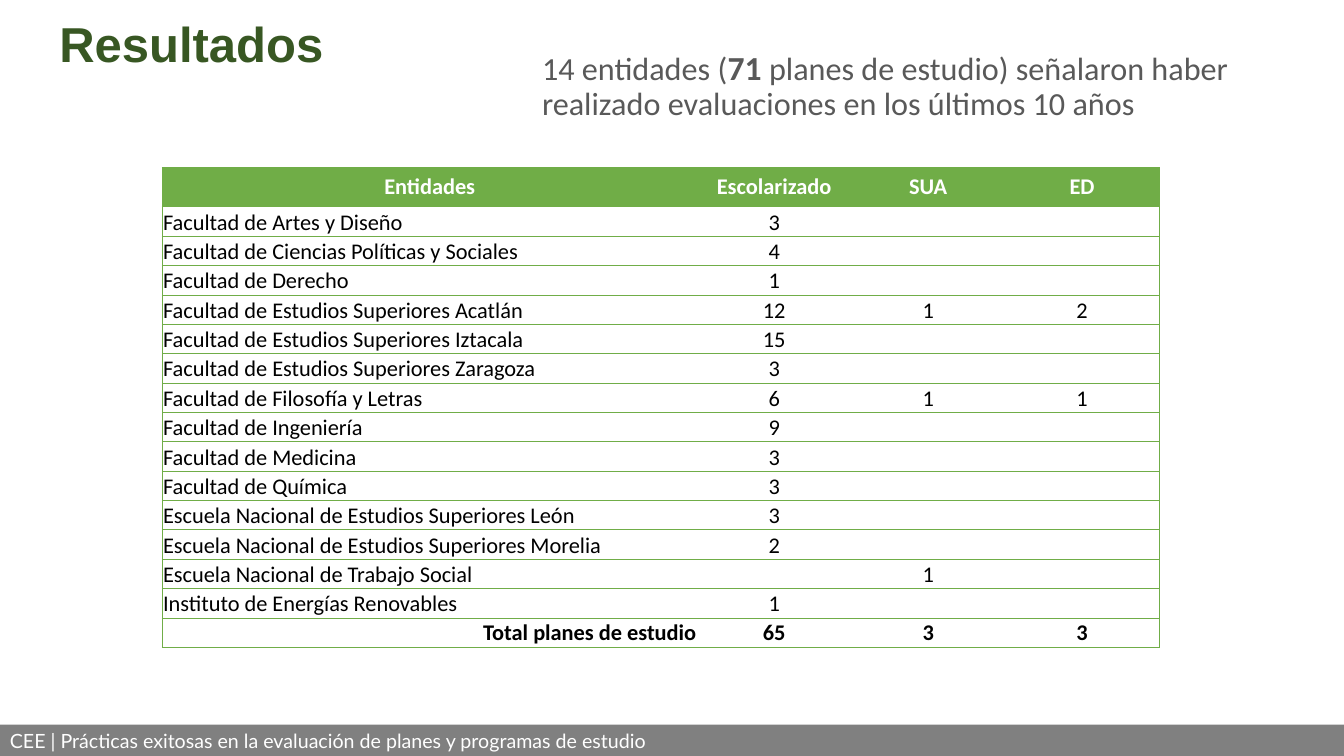
from dataclasses import dataclass

from lxml import etree
from pptx import Presentation
from pptx import util as u
from pptx.dml.color import RGBColor
from pptx.enum import shapes, text
from pptx.oxml.ns import qn

GREEN = "70AD47"
ALIGN = text.PP_ALIGN
ANCHOR = text.MSO_ANCHOR
TABLE_SIZE = 16


@dataclass(frozen=True)
class Entity:
    name: str
    in_person: str = ""
    sua: str = ""
    ed: str = ""

    def values(self) -> tuple[str, ...]:
        return self.name, self.in_person, self.sua, self.ed


@dataclass(frozen=True)
class RowStyle:
    color: str = "000000"
    bold: bool = False
    fill: str = ""
    first_align: ALIGN = ALIGN.LEFT
    anchor: ANCHOR = ANCHOR.BOTTOM
    inset: float = 0.02


HEADER = Entity("Entidades", "Escolarizado", "SUA", "ED")
TOTAL = Entity("Total planes de estudio", "65", "3", "3")
ENTITIES = [
    Entity("Facultad de Artes y Diseño", "3"),
    Entity("Facultad de Ciencias Políticas y Sociales", "4"),
    Entity("Facultad de Derecho", "1"),
    Entity("Facultad de Estudios Superiores Acatlán", "12", "1", "2"),
    Entity("Facultad de Estudios Superiores Iztacala", "15"),
    Entity("Facultad de Estudios Superiores Zaragoza", "3"),
    Entity("Facultad de Filosofía y Letras", "6", "1", "1"),
    Entity("Facultad de Ingeniería", "9"),
    Entity("Facultad de Medicina", "3"),
    Entity("Facultad de Química", "3"),
    Entity("Escuela Nacional de Estudios Superiores León", "3"),
    Entity("Escuela Nacional de Estudios Superiores Morelia", "2"),
    Entity("Escuela Nacional de Trabajo Social", sua="1"),
    Entity("Instituto de Energías Renovables", "1"),
]
HEADER_STYLE = RowStyle("FFFFFF", True, GREEN, ALIGN.CENTER, ANCHOR.MIDDLE, 0.1)
ENTITY_STYLE = RowStyle()
TOTAL_STYLE = RowStyle(bold=True, first_align=ALIGN.RIGHT, anchor=ANCHOR.MIDDLE)


def rgb(value: str) -> RGBColor:
    return RGBColor.from_string(value)


def add_text(p, content: str, *, size: float, color: str, font: str = "Calibri",
             bold: bool = False, align: ALIGN = ALIGN.LEFT, spacing: float = 1.0) -> None:
    p.alignment = align
    p.line_spacing = spacing
    r = p.add_run()
    r.text = content
    r.font.name = font
    r.font.size = u.Pt(size)
    r.font.bold = bold
    r.font.color.rgb = rgb(color)


def set_borders(cell, sides: dict[str, bool]) -> None:
    tc_pr = cell._tc.get_or_add_tcPr()
    for i, (side, visible) in enumerate(sides.items()):
        ln = etree.Element(qn(f"a:ln{side}"), w=str(u.Pt(0.5)))
        if visible:
            fill = etree.SubElement(ln, qn("a:solidFill"))
            etree.SubElement(fill, qn("a:srgbClr"), val=GREEN)
        else:
            etree.SubElement(ln, qn("a:noFill"))
        tc_pr.insert(i, ln)


def fill_row(cells, entity: Entity, style: RowStyle) -> None:
    values = entity.values()
    for col, (cell, value) in enumerate(zip(cells, values)):
        cell.vertical_anchor = style.anchor
        cell.margin_left = cell.margin_right = u.Cm(0.02)
        cell.margin_top = u.Cm(style.inset)
        cell.margin_bottom = u.Cm(0)
        if style.fill:
            cell.margin_bottom = u.Cm(style.inset)
            cell.fill.solid()
            cell.fill.fore_color.rgb = rgb(style.fill)
        else:
            cell.fill.background()
        p = cell.text_frame.paragraphs[0]
        if value:
            add_text(p, value, size=TABLE_SIZE, color=style.color, bold=style.bold,
                     align=ALIGN.CENTER if col else style.first_align)
        else:
            etree.SubElement(p._p, qn("a:endParaRPr"), sz=str(TABLE_SIZE * 100))
        set_borders(cell, {"L": col == 0, "R": col == len(values) - 1,
                           "T": True, "B": True})


def add_results_table(s) -> None:
    rows = [(HEADER, HEADER_STYLE), *((e, ENTITY_STYLE) for e in ENTITIES),
            (TOTAL, TOTAL_STYLE)]
    widths = [13.48, 3.88, 3.88, 3.88]
    heights = [0.99] + [0.74] * (len(rows) - 1)
    table = s.shapes.add_table(len(rows), len(widths), u.Cm(4.09), u.Cm(4.22),
                               u.Cm(sum(widths)), u.Cm(sum(heights))).table
    table.first_row = table.horz_banding = False
    for column, width in zip(table.columns, widths):
        column.width = u.Cm(width)
    for row, height, (entity, style) in zip(table.rows, heights, rows):
        row.height = u.Cm(height)
        fill_row(row.cells, entity, style)


def add_title(s) -> None:
    title = s.shapes.title
    title.left, title.top = u.Cm(1.24), u.Cm(0.51)
    title.width, title.height = u.Cm(21.08), u.Cm(1.47)
    tf = title.text_frame
    tf.auto_size = text.MSO_AUTO_SIZE.NONE
    tf.vertical_anchor = ANCHOR.BOTTOM
    add_text(tf.paragraphs[0], "Resultados", size=35, color="385723",
             font="Arial", bold=True, spacing=0.9)


def add_summary(s) -> None:
    sp = s.shapes.add_textbox(u.Cm(13.41), u.Cm(1.17), u.Cm(18.67), u.Cm(2.44))
    sp.text_frame.word_wrap = True
    p = sp.text_frame.paragraphs[0]
    for content, size, bold in [
        ("14 entidades (", 23, False),
        ("71", 24, True),
        (" planes de estudio) señalaron haber realizado evaluaciones "
         "en los últimos 10 años", 23, False),
    ]:
        add_text(p, content, size=size, color="595959", bold=bold, spacing=0.9)


def add_footer(s, width: int) -> None:
    sp = s.shapes.add_shape(shapes.MSO_SHAPE.RECTANGLE, 0, u.Cm(18.26),
                            width, u.Cm(0.79))
    sp.shadow.inherit = False
    sp.fill.solid()
    sp.fill.fore_color.rgb = rgb("808080")
    sp.line.fill.background()
    tf = sp.text_frame
    tf.word_wrap = True
    tf.vertical_anchor = ANCHOR.MIDDLE
    add_text(tf.paragraphs[0],
             "CEE | Prácticas exitosas en la evaluación de planes y programas de estudio",
             size=14, color="FFFFFF", font="Lato", align=ALIGN.JUSTIFY)


def main() -> None:
    prs = Presentation()
    prs.slide_width, prs.slide_height = u.Cm(33.87), u.Cm(19.05)
    s = prs.slides.add_slide(prs.slide_layouts.get_by_name("Title Only"))
    add_title(s)
    add_summary(s)
    add_footer(s, prs.slide_width)
    add_results_table(s)
    prs.save("out.pptx")


if __name__ == "__main__":
    main()
